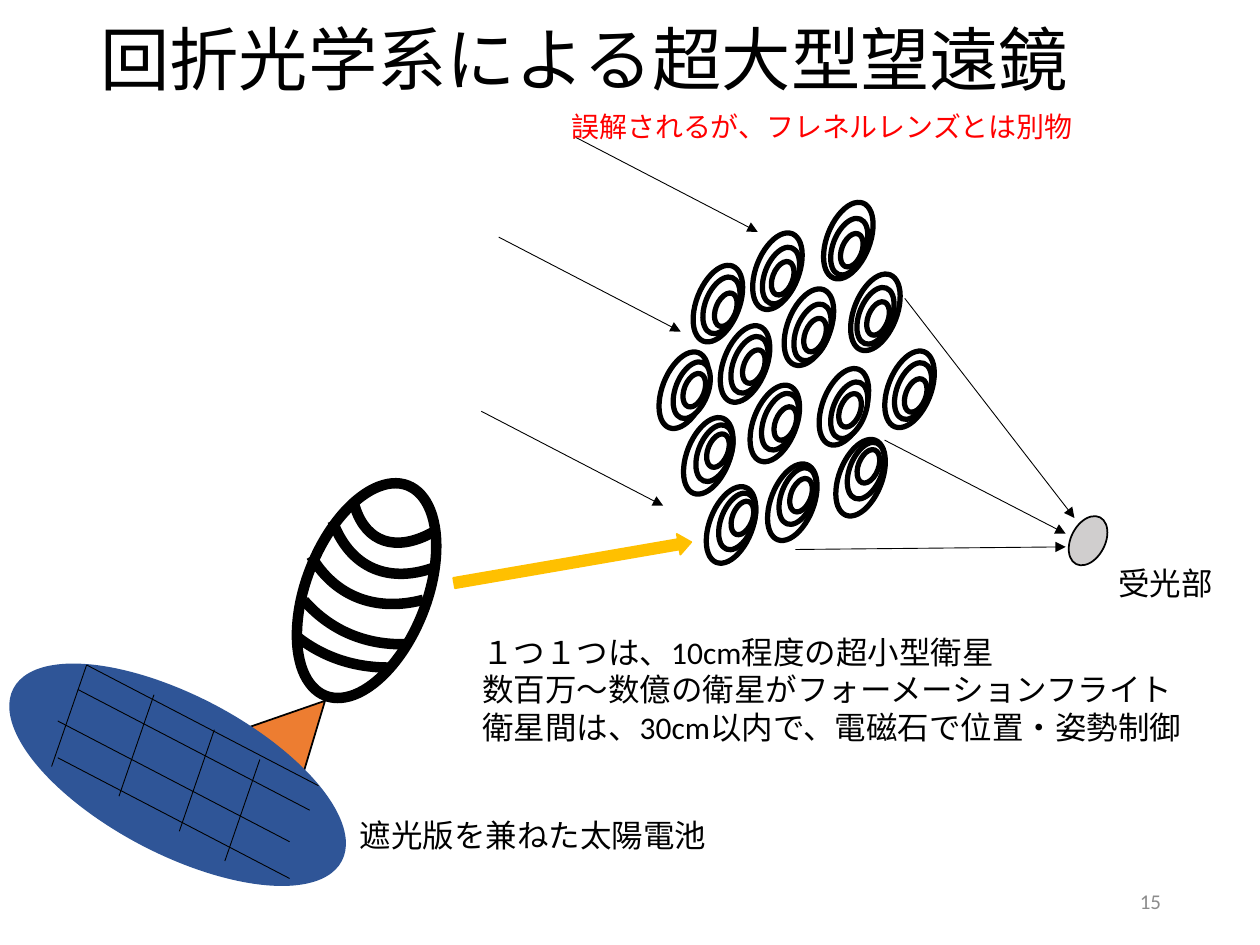
"""Build the slide on a very large diffractive space telescope."""
from dataclasses import dataclass
from typing import Any

from lxml import etree
from pptx import Presentation
from pptx.dml import color
from pptx.enum import shapes, text
from pptx.oxml import ns
from pptx.util import Pt

KIND = shapes.MSO_SHAPE
BLACK, WHITE, GREY, RED = "000000", "FFFFFF", "8C8C8C", "FF0000"
BLUE, ORANGE, GOLD, SILVER = "2F5597", "ED7D31", "FFC000", "D0CECE"
TILT = 21.4

RING_SIZES = [(24.5, 46), (18.5, 34), (11.5, 20)]
SATELLITES = [
    [(398, 150.5), (403, 157.5), (409, 167)],
    [(432, 132), (437, 140.5), (441.5, 149)],
    [(413.5, 185), (419, 191.5), (425, 199.5)],
    [(378.5, 200), (386, 206), (391, 213)],
    [(392.5, 237.5), (399, 242), (404.5, 247.5)],
    [(450, 164), (455, 173), (460, 181.5)],
    [(430.5, 219), (436.5, 224), (443, 232)],
    [(472.5, 114.5), (476, 124), (481, 133)],
    [(405.5, 277), (412, 281), (418.5, 286)],
    [(488, 155.5), (491, 163.5), (496, 172)],
    [(470, 209.5), (476, 217.5), (480, 224.5)],
    [(440.5, 264), (446.5, 266.5), (452, 273)],
    [(507.5, 199.5), (512.5, 206.5), (517.5, 216)],
    [(479.5, 250), (485.5, 252), (490.5, 256.5)],
]
INCOMING_STARTS = [(329, 78.5), (285, 135.5), (275, 235)]
INCOMING_STEP = (104, 54)
FOCUSED_RAYS = [
    ((517, 170.5), (614, 296)),
    ((505.5, 251.5), (609, 305)),
    ((454.5, 314), (609, 312.5)),
]
PANEL_LINES = [
    ((132.5, 69), [(49.5, 380), (44.5, 394), (33, 412), (33, 433)]),
    ((-20, 58), [(49.5, 380), (88, 397), (122.5, 417), (148.5, 434)]),
]
MIRROR_ARCS = [
    ((213, 128, 91, 189.5), (42.39, 63.12)),
    ((198, 102, 130.5, 234), (42.96, 64.09)),
    ((180.5, 60, 170.5, 295), (44.35, 61.48)),
    ((162, 40.5, 217.5, 337.5), (46.65, 59.88)),
    ((144.5, 11, 247.5, 381.5), (46.65, 57.33)),
]
NOTES = [
    "１つ１つは、10cm程度の超小型衛星",
    "数百万～数億の衛星がフォーメーションフライト",
    "衛星間は、30cm以内で、電磁石で位置・姿勢制御",
]


def rgb(value):
    return color.RGBColor.from_string(value)


def assign(target, values):
    for name, value in values.items():
        setattr(target, name, value)


def shifted(start, step):
    return start[0] + step[0], start[1] + step[1]


@dataclass
class Sketch:
    page: Any
    font: str = "Calibri"
    size: float = 18
    ink: str = BLACK

    def fill_text(self, frame, lines, para_format, **font_format):
        for index, line in enumerate(lines):
            para = frame.paragraphs[0] if index == 0 else frame.add_paragraph()
            assign(para, para_format)
            span = para.add_run()
            span.text = line
            ink = font_format.get("ink", self.ink)
            size = font_format.get("size", self.size)
            assign(span.font, {"name": self.font, "size": Pt(size)})
            span.font.color.rgb = rgb(ink)

    def title(self, place, line, size):
        box = self.page.shapes.title
        assign(box, dict(zip(("left", "top", "width", "height"), map(Pt, place))))
        assign(box.text_frame, {
            "word_wrap": True,
            "vertical_anchor": text.MSO_ANCHOR.MIDDLE,
        })
        layout = {"alignment": text.PP_ALIGN.LEFT, "line_spacing": 0.9}
        self.fill_text(box.text_frame, [line], layout, size=size)

    def label(self, place, lines, wrap=True, anchor=text.MSO_ANCHOR.TOP,
              align=text.PP_ALIGN.LEFT, **font_format):
        frame = self.page.shapes.add_textbox(*map(Pt, place)).text_frame
        assign(frame, {"word_wrap": wrap, "vertical_anchor": anchor})
        self.fill_text(frame, lines, {"alignment": align}, **font_format)

    def figure(self, kind, place, turn=0, fill=None, line=BLACK, weight=1, adjust=()):
        shape = self.page.shapes.add_shape(kind, *map(Pt, place))
        shape.rotation = turn
        shape.shadow.inherit = False
        for index, value in enumerate(adjust):
            shape.adjustments[index] = value
        if fill:
            shape.fill.solid()
            shape.fill.fore_color.rgb = rgb(fill)
        else:
            shape.fill.background()
        shape.line.color.rgb = rgb(line)
        shape.line.width = Pt(weight)

    def ray(self, start, end, arrow=True):
        line = self.page.shapes.add_connector(
            shapes.MSO_CONNECTOR.STRAIGHT, *map(Pt, (*start, *end)))
        line.line.color.rgb = rgb(self.ink)
        line.line.width = Pt(0.5)
        properties = line.element.spPr
        if arrow:
            stroke = properties.find(ns.qn("a:ln"))
            etree.SubElement(stroke, ns.qn("a:tailEnd"), type="triangle")
        etree.SubElement(properties, ns.qn("a:effectLst"))


def main():
    deck = Presentation()
    assign(deck, {"slide_width": Pt(720), "slide_height": Pt(540)})
    sketch = Sketch(deck.slides.add_slide(deck.slide_layouts[5]))

    sketch.title((50, 12, 620, 47.5), "回折光学系による超大型望遠鏡", 39.6)
    sketch.figure(KIND.OVAL, (612, 294, 19.5, 30), 27.1, SILVER)
    for corners in SATELLITES:
        for corner, ring in zip(corners, RING_SIZES):
            sketch.figure(KIND.OVAL, (*corner, *ring), TILT, WHITE, weight=3)
    sketch.label((632, 318.5, 69, 29), ["受光部"])

    for start in INCOMING_STARTS:
        sketch.ray(start, shifted(start, INCOMING_STEP))
    for start, end in FOCUSED_RAYS:
        sketch.ray(start, end)
    sketch.figure(KIND.RIGHT_ARROW, (258.5, 315.5, 137.5, 12), 350.2, GOLD, GOLD,
                  adjust=(0.5, 0.61))
    sketch.label((319.5, 59, 350.5, 26.5), ["誤解されるが、フレネルレンズとは別物"],
                 size=16, ink=RED)
    sketch.label((508.5, 500.5, 162, 28.5), ["15"], anchor=text.MSO_ANCHOR.MIDDLE,
                 align=text.PP_ALIGN.RIGHT, size=12, ink=GREY)

    sketch.figure(KIND.ISOSCELES_TRIANGLE, (90.5, 386.5, 88, 63.5), 16.7, ORANGE,
                  adjust=(1,))
    sketch.figure(KIND.OVAL, (-4, 398, 211, 89.5), 27.7, BLUE, BLUE)
    for step, starts in PANEL_LINES:
        for start in starts:
            sketch.ray(start, shifted(start, step), arrow=False)
    sketch.label((198.5, 463, 214.5, 29), ["遮光版を兼ねた太陽電池"], wrap=False)

    sketch.figure(KIND.OVAL, (175, 273, 69, 129), TILT, WHITE, weight=6)
    for place, angles in MIRROR_ARCS:
        sketch.figure(KIND.ARC, place, 26.1, weight=6, adjust=angles)
    sketch.label((268.5, 358, 424, 72.5), NOTES)
    deck.save("out.pptx")


if __name__ == "__main__":
    main()
